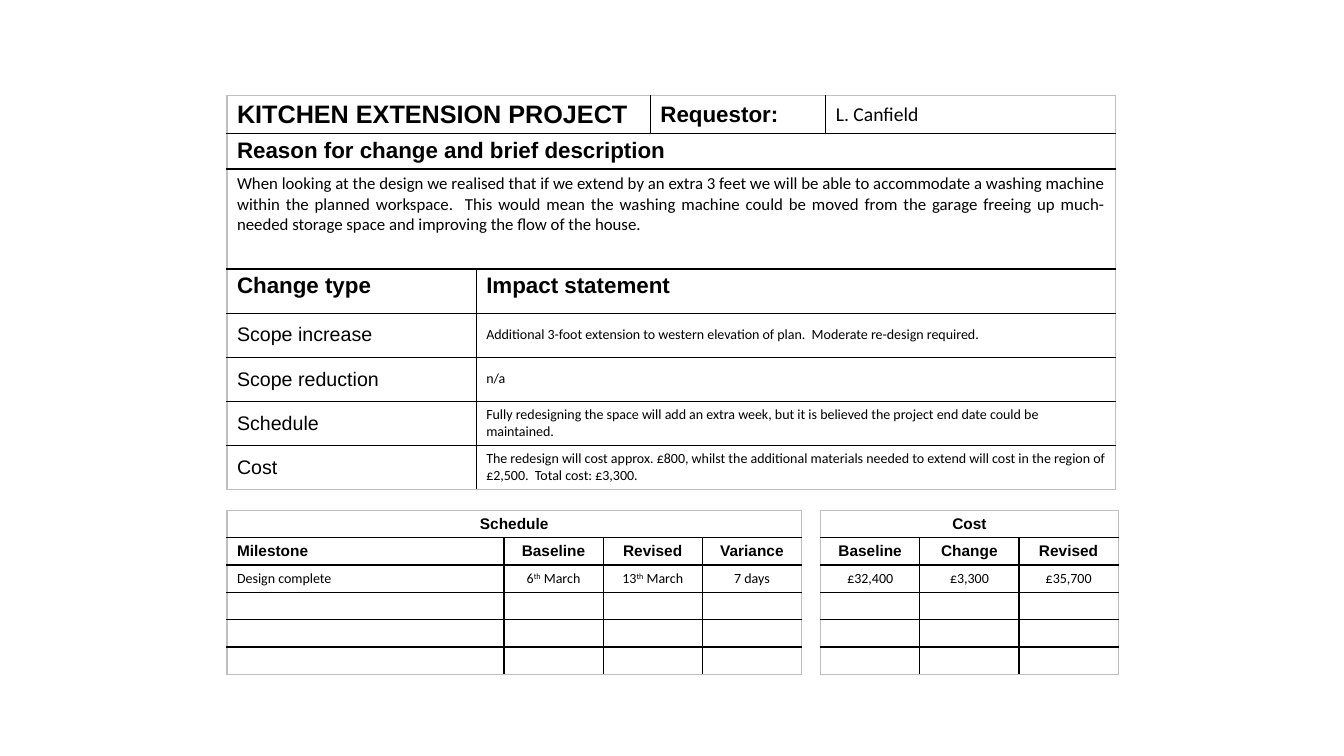
from lxml.etree import SubElement
from pptx import Presentation
from pptx.dml.color import RGBColor
from pptx.enum.text import MSO_ANCHOR as Anchor, PP_ALIGN as Align
from pptx.oxml.ns import qn
from pptx.util import Cm, Pt

BLACK = RGBColor(0, 0, 0)
WHITE = RGBColor(0xFF, 0xFF, 0xFF)
EDGE_GREY = RGBColor(0xBF, 0xBF, 0xBF)
HEADING, BODY = "Arial", "Calibri"

LEFT = 5.72
REQUEST_TOP, PLAN_TOP = 2.41, 12.86
REQUEST_COLUMNS = [6.28, 4.39, 4.42, 7.31]
REQUEST_ROWS = [0.96, 0.89, 2.52] + [1.11] * 5
PLAN_ROW, NUMBER_COLUMN, MILESTONE_COLUMN = 0.69, 2.5, 6.98
COST_LEFT = 20.68

DESCRIPTION = (
    "When looking at the design we realised that if we extend by an extra 3 feet "
    "we will be able to accommodate a washing machine within the planned workspace.  "
    "This would mean the washing machine could be moved from the garage freeing up "
    "much-needed storage space and improving the flow of the house."
)
IMPACTS = [
    ("Scope increase", "Additional 3-foot extension to western elevation of plan.  "
                       "Moderate re-design required."),
    ("Scope reduction", "n/a"),
    ("Schedule", "Fully redesigning the space will add an extra week, but it is believed "
                 "the project end date could be maintained."),
    ("Cost", "The redesign will cost approx. £800, whilst the additional materials needed "
             "to extend will cost in the region of £2,500.  Total cost: £3,300."),
]
SCHEDULE = [
    ["Milestone", "Baseline", "Revised", "Variance"],
    ["Design complete", "6^th^ March", "13^th^ March", "7 days"],
]
COST = [
    ["Baseline", "Change", "Revised"],
    ["£32,400", "£3,300", "£35,700"],
]
PLAN_ROW_COUNT = 6


def add_grid(slide, left, top, columns, rows):
    """Add an unstyled table with the given column widths and row heights in cm."""
    frame = slide.shapes.add_table(len(rows), len(columns), Cm(left), Cm(top),
                                   Cm(sum(columns)), Cm(sum(rows)))
    table = frame.table
    table.first_row = table.horz_banding = False
    for column, width in zip(table.columns, columns):
        column.width = Cm(width)
    for row, height in zip(table.rows, rows):
        row.height = Cm(height)
    return table


def merge_row(table, row, first, last):
    table.cell(row, first).merge(table.cell(row, last))


def draw_border(cell, side, color):
    line = SubElement(cell._tc.get_or_add_tcPr(), qn(f"a:ln{side}"), w=str(Pt(1)))
    fill = SubElement(line, qn("a:solidFill"))
    SubElement(fill, qn("a:srgbClr"), val=str(color))


def finish_grid(table, margin):
    """Rule the grid black inside and grey outside, on white cells."""
    last_row, last_column = len(table.rows) - 1, len(table.columns) - 1
    for r in range(last_row + 1):
        for c in range(last_column + 1):
            cell = table.cell(r, c)
            end = c + cell.span_width - 1 if cell.is_merge_origin else c
            if not cell.is_spanned:
                draw_border(cell, "L", EDGE_GREY if c == 0 else BLACK)
            if not cell.is_spanned or c == last_column:
                draw_border(cell, "R", EDGE_GREY if end == last_column else BLACK)
            draw_border(cell, "T", EDGE_GREY if r == 0 else BLACK)
            draw_border(cell, "B", EDGE_GREY if r == last_row else BLACK)
            cell.fill.solid()
            cell.fill.fore_color.rgb = WHITE
            cell.margin_top = cell.margin_bottom = Cm(margin)


def write(cell, text, size, font, bold=False, align=Align.LEFT, anchor=Anchor.MIDDLE):
    """Fill a cell; text between ^ marks is superscript."""
    cell.vertical_anchor = anchor
    paragraph = cell.text_frame.paragraphs[0]
    paragraph.alignment = align
    for index, part in enumerate(text.split("^")):
        run = paragraph.add_run()
        run.text = part
        run.font.size, run.font.name, run.font.bold = Pt(size), font, bold
        run.font.color.rgb = BLACK
        if index % 2:
            run._r.get_or_add_rPr().set("baseline", "30000")


def add_change_request(slide, left, top):
    table = add_grid(slide, left, top, REQUEST_COLUMNS, REQUEST_ROWS)
    merge_row(table, 0, 0, 1)
    for row in (1, 2):
        merge_row(table, row, 0, 3)
    for row in range(3, len(REQUEST_ROWS)):
        merge_row(table, row, 1, 3)
    finish_grid(table, 0.12)

    write(table.cell(0, 0), "KITCHEN EXTENSION PROJECT", 18, HEADING, True)
    write(table.cell(0, 2), "Requestor:", 16, HEADING, True)
    write(table.cell(0, 3), "L. Canfield", 14, BODY)
    for row, column, text in [(1, 0, "Reason for change and brief description"),
                              (3, 0, "Change type"), (3, 1, "Impact statement")]:
        write(table.cell(row, column), text, 16, HEADING, True, anchor=Anchor.TOP)
    write(table.cell(2, 0), DESCRIPTION, 12, BODY, align=Align.JUSTIFY, anchor=Anchor.TOP)
    for row, (change_type, impact) in enumerate(IMPACTS, 4):
        write(table.cell(row, 0), change_type, 14, HEADING)
        write(table.cell(row, 1), impact, 10, BODY)


def add_plan_table(slide, left, top, title, columns, entries):
    """Add a titled table with headings, one filled row and empty rows below."""
    table = add_grid(slide, left, top, columns, [PLAN_ROW] * PLAN_ROW_COUNT)
    merge_row(table, 0, 0, len(columns) - 1)
    finish_grid(table, 0.1)
    write(table.cell(0, 0), title, 11, HEADING, True, Align.CENTER)
    for row, texts in enumerate(entries, 1):
        size, font, bold = (11, HEADING, True) if row == 1 else (10, BODY, False)
        for column, text in enumerate(texts):
            align = Align.LEFT if columns[column] == MILESTONE_COLUMN else Align.CENTER
            write(table.cell(row, column), text, size, font, bold, align)
    for cell in table.iter_cells():
        if not cell.text_frame.text:
            paragraph = cell.text_frame.paragraphs[0]
            SubElement(paragraph._p, qn("a:endParaRPr"), sz="1000")


def main():
    presentation = Presentation()
    presentation.slide_width, presentation.slide_height = Cm(33.87), Cm(19.05)
    slide = presentation.slides.add_slide(presentation.slide_layouts[6])
    add_change_request(slide, LEFT, REQUEST_TOP)
    add_plan_table(slide, LEFT, PLAN_TOP, "Schedule",
                   [MILESTONE_COLUMN] + [NUMBER_COLUMN] * 3, SCHEDULE)
    add_plan_table(slide, COST_LEFT, PLAN_TOP, "Cost", [NUMBER_COLUMN] * 3, COST)
    presentation.save("out.pptx")


if __name__ == "__main__":
    main()
